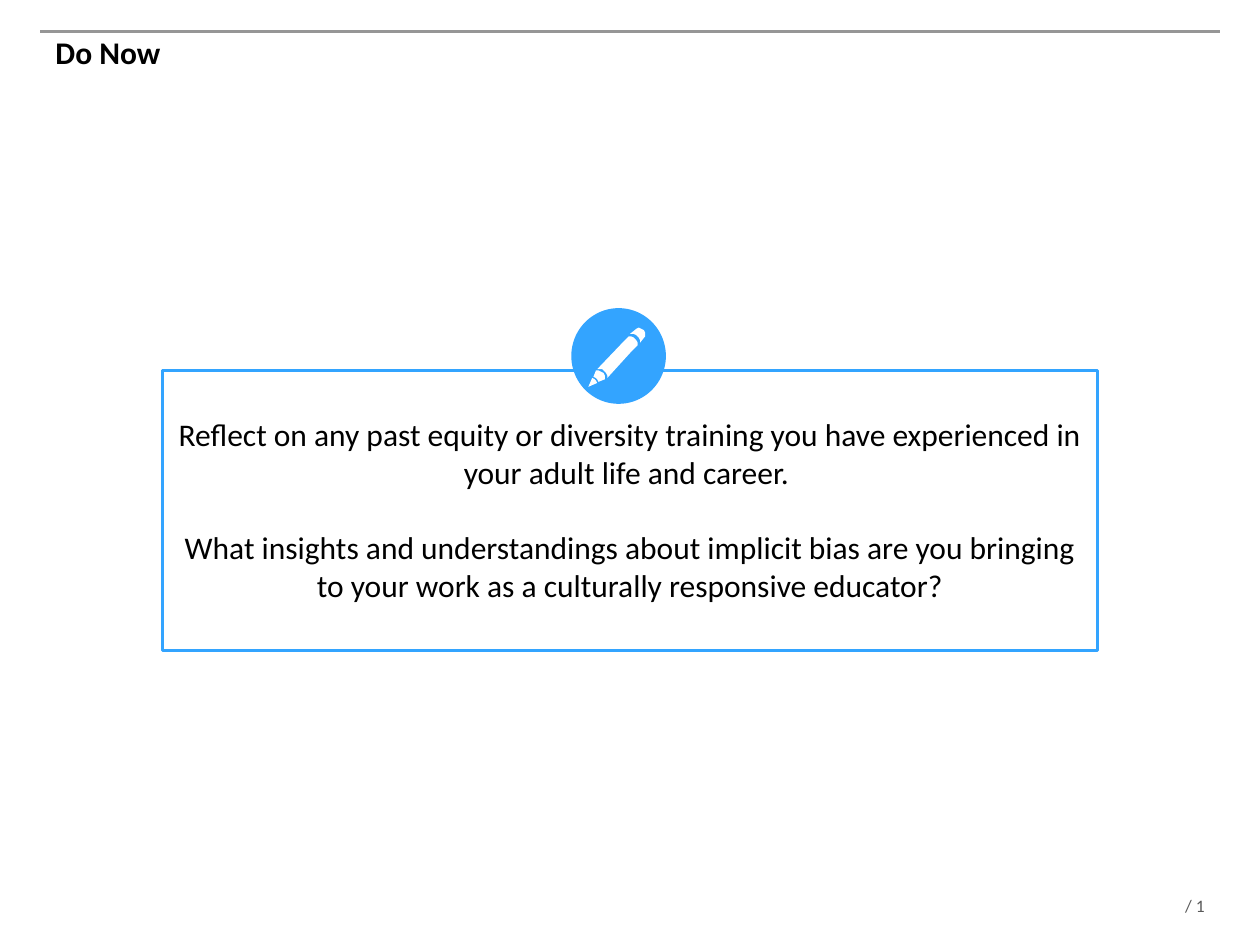
from pptx import Presentation
from pptx.dml.color import RGBColor
from pptx.enum.shapes import MSO_CONNECTOR as Link, MSO_SHAPE as Kind
from pptx.enum.text import MSO_ANCHOR as Anchor, PP_ALIGN as Align
from pptx.util import Inches, Pt
from lxml.etree import SubElement
from pptx.oxml.ns import qn

BLUE, WHITE, BLACK = "33A4FF", "FFFFFF", "000000"

deck = Presentation()
deck.slide_width, deck.slide_height = Inches(10), Inches(7.5)
wide, high = deck.slide_width, deck.slide_height
slide = deck.slides.add_slide(deck.slide_layouts[5])
shapes = slide.shapes


def area(x, y, w, h):
    """Turn percentages of the slide's size into left, top, width, height."""
    return [round(part * size / 100)
            for part, size in zip((x, y, w, h), (wide, high, wide, high))]


def style(par, size, color, bold=False):
    par.font.name, par.font.size, par.font.bold = "Calibri", Pt(size), bold
    par.font.color.rgb = RGBColor.from_string(color)


# Top rule
left, top, width, _ = area(3.2, 3.33, 93.6, 0)
rule = shapes.add_connector(Link.STRAIGHT, left, top, left + width, top)
rule.line.color.rgb = RGBColor.from_string("969696")
rule.line.width = Pt(2)
SubElement(rule._element.spPr, qn("a:effectLst"))

# Title
title = shapes.title
title.left, title.top, title.width, title.height = area(3.4, 2.8, 93.2, 9.5)
title.text_frame.text = "Do Now"
title.text_frame.vertical_anchor = Anchor.TOP
head = title.text_frame.paragraphs[0]
head.alignment = Align.LEFT
style(head, 18, BLACK, True)

# Page number
page = shapes.add_textbox(*area(93.75, 94.7, 5, 2.3)).text_frame
page.word_wrap = True
page.margin_left = page.margin_right = page.margin_top = page.margin_bottom = 0
page.text = " / 1"
style(page.paragraphs[0], 10, "595959")

# Prompt box
box = shapes.add_shape(Kind.RECTANGLE, *area(12.9, 39.2, 74.2, 29.65))
box.shadow.inherit = False
box.fill.solid()
box.fill.fore_color.rgb = RGBColor.from_string(WHITE)
box.line.color.rgb = RGBColor.from_string(BLUE)
box.line.width = Pt(2)
frame = box.text_frame
frame.word_wrap = True
frame.vertical_anchor = Anchor.MIDDLE
frame.margin_bottom = Inches(0.07)
frame.text = (
    "Reflect on any past equity or diversity training you have experienced "
    "in your adult life and career. \n"
    "What insights and understandings about implicit bias are you bringing "
    "to your work as a culturally responsive educator?")
for par in frame.paragraphs:
    par.alignment = Align.CENTER
    style(par, 18, BLACK)
frame.paragraphs[1].space_before = Pt(21.5)

# Pencil badge
badge = shapes.add_group_shape().shapes
disc = badge.add_shape(Kind.OVAL, *area(45.45, 32.75, 7.3, 9.85))
disc.shadow.inherit = False
disc.fill.solid()
disc.fill.fore_color.rgb = RGBColor.from_string(BLUE)
disc.line.color.rgb = RGBColor.from_string(BLUE)
disc.line.width = Pt(1.5)

# Collar, tip, eraser and barrel, in thousandths of the slide's width
pencil = [
    [(475, 303), (480, 301), (480, 298), (479, 296), (477, 295), (475, 294),
     (473, 294), (471, 299), (473, 300), (474, 301), (475, 303)],
    [(470, 300), (467, 307), (474, 304), (473, 302), (472, 301)],
    [(500, 265), (503, 265), (505, 266), (507, 268), (508, 270), (508, 272),
     (512, 267), (512, 264), (511, 262), (509, 261), (507, 260), (505, 261)],
    [(506, 272), (505, 270), (503, 268), (501, 267), (499, 267), (495, 271),
     (474, 293), (478, 293), (480, 295), (481, 296), (482, 298), (482, 300),
     (502, 278), (506, 274)],
]
for first, *rest in pencil:
    pen = badge.build_freeform(*first, scale=wide / 1000)
    pen.add_line_segments(rest, close=True)
    part = pen.convert_to_shape()
    part.shadow.inherit = False
    part.fill.solid()
    part.fill.fore_color.rgb = RGBColor.from_string(WHITE)
    part.line.fill.background()

deck.save("out.pptx")
